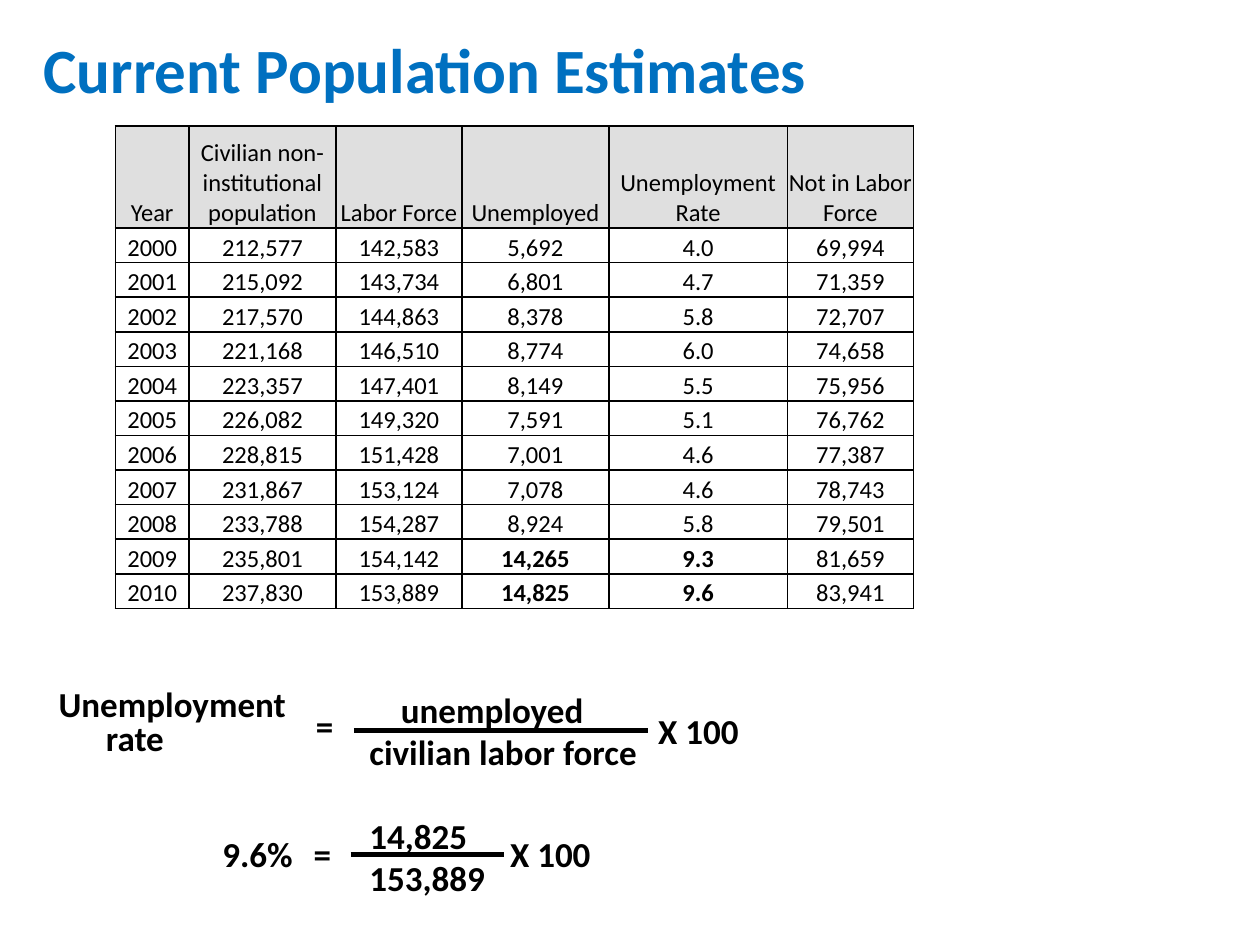
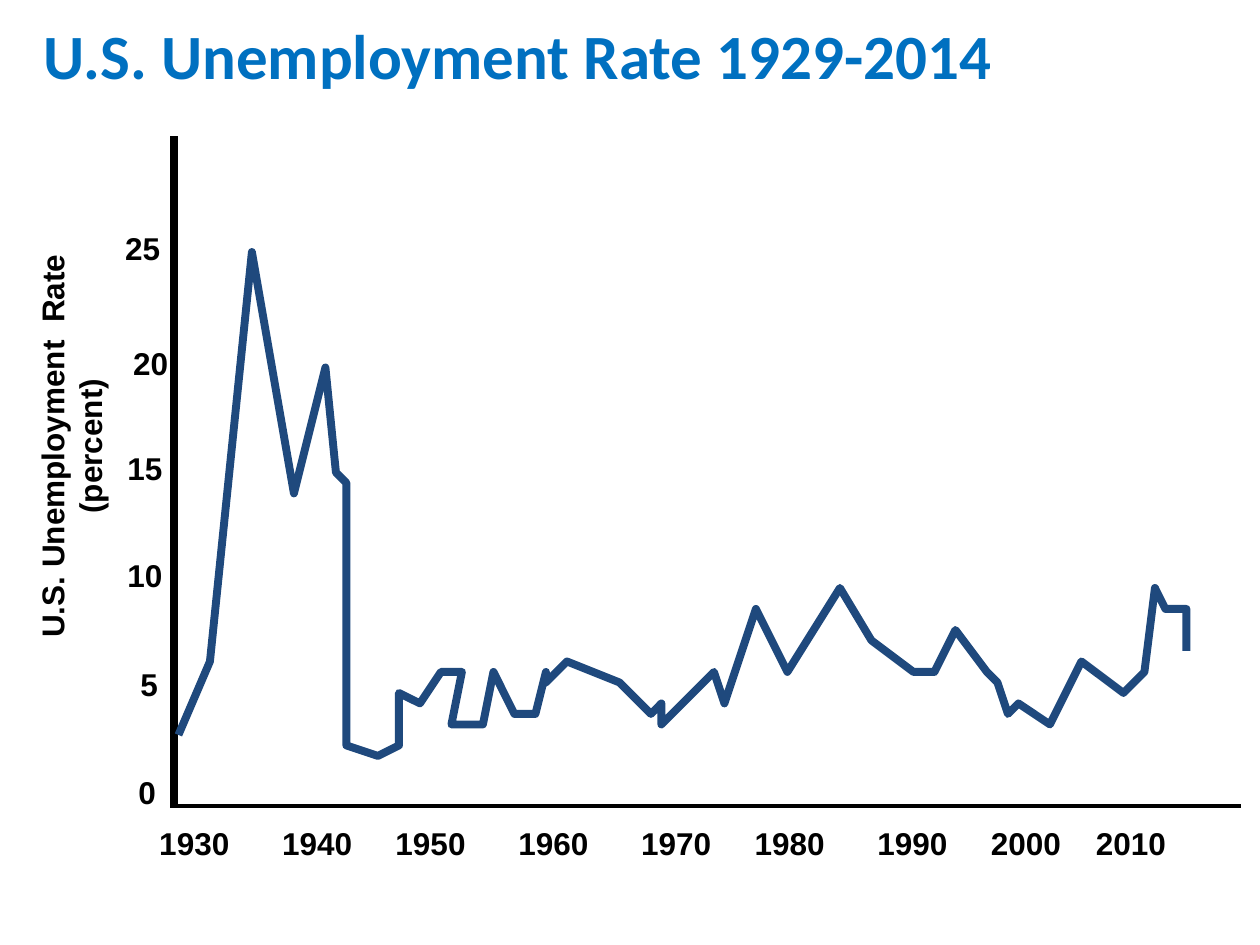
from lxml.etree import SubElement
from pptx import Presentation
from pptx.dml.color import RGBColor
from pptx.enum.shapes import MSO_CONNECTOR
from pptx.enum.text import MSO_ANCHOR, PP_ALIGN
from pptx.oxml.ns import qn
from pptx.util import Inches, Pt

STEP = Inches(1) // 12
COLUMNS, ROWS = 120, 90
BLACK, WHITE, TITLE_BLUE = "000000", "FFFFFF", "0070C0"
RATE_BLUE, HEADER_GREY = "1F497D", "808080"


def color(hex_code):
    return RGBColor.from_string(hex_code)


def write(target, text, at=None, size=20, font="Calibri", ink=BLACK, bold=True,
          align=PP_ALIGN.LEFT, anchor=MSO_ANCHOR.TOP, spacing=None,
          first_indent=None, rotation=0):
    if at:
        box = target.shapes.add_textbox(*[round(v * STEP) for v in at])
        box.rotation = rotation
        target = box.text_frame
    target.word_wrap = True
    target.vertical_anchor = anchor
    target.text = text
    for paragraph in target.paragraphs:
        paragraph.alignment = align
        paragraph.line_spacing = spacing
        paragraph.font.size = Pt(size)
        paragraph.font.name = font
        paragraph.font.bold = bold
        paragraph.font.color.rgb = color(ink)
    if first_indent:
        properties = target.paragraphs[0]._p.get_or_add_pPr()
        for name, columns in zip(("marL", "indent"), first_indent):
            properties.set(name, str(round(columns * STEP)))


deck = Presentation()
deck.slide_width, deck.slide_height = COLUMNS * STEP, ROWS * STEP

slides = []
for heading, top, width, height in [
    ("Current Population Estimates", 2.6, 99, 7.8),
    ("U.S. Unemployment Rate 1929-2014", 0.9, 110, 8.5),
]:
    slide = deck.slides.add_slide(deck.slide_layouts[5])
    title = slide.shapes.title
    title.left, title.top = round(2.95 * STEP), round(top * STEP)
    title.width, title.height = width * STEP, round(height * STEP)
    write(title.text_frame, heading, size=36, ink=TITLE_BLUE, anchor=MSO_ANCHOR.MIDDLE)
    slides.append(slide)
estimates_slide, history_slide = slides
history_slide.shapes.title.fill.solid()
history_slide.shapes.title.fill.fore_color.rgb = color(WHITE)

estimates = [
    ("Year", "Civilian non-institutional population", "Labor Force", "Unemployed",
     "Unemployment Rate", "Not in Labor Force"),
    ("2000", "212,577", "142,583", "5,692", "4.0", "69,994"),
    ("2001", "215,092", "143,734", "6,801", "4.7", "71,359"),
    ("2002", "217,570", "144,863", "8,378", "5.8", "72,707"),
    ("2003", "221,168", "146,510", "8,774", "6.0", "74,658"),
    ("2004", "223,357", "147,401", "8,149", "5.5", "75,956"),
    ("2005", "226,082", "149,320", "7,591", "5.1", "76,762"),
    ("2006", "228,815", "151,428", "7,001", "4.6", "77,387"),
    ("2007", "231,867", "153,124", "7,078", "4.6", "78,743"),
    ("2008", "233,788", "154,287", "8,924", "5.8", "79,501"),
    ("2009", "235,801", "154,142", "14,265", "9.3", "81,659"),
    ("2010", "237,830", "153,889", "14,825", "9.6", "83,941"),
]
column_widths = [7, 14, 12, 14, 17, 12]
table_height, header_height = Inches(3.83), Inches(0.81)
year_height = (table_height - header_height) // (len(estimates) - 1)
table = estimates_slide.shapes.add_table(
    len(estimates), len(column_widths), 11 * STEP, 12 * STEP,
    sum(column_widths) * STEP, table_height).table
table.first_row = table.horz_banding = False
for column, width in zip(table.columns, column_widths):
    column.width = width * STEP
for r, record in enumerate(estimates):
    table.rows[r].height = year_height if r else header_height
    for c, value in enumerate(record):
        cell = table.cell(r, c)
        cell.margin_left = cell.margin_right = cell.margin_top = Inches(0.01)
        cell.margin_bottom = 0
        write(cell.text_frame, value, size=14, bold=r > 9 and c in (3, 4),
              align=PP_ALIGN.CENTER)
        cell.vertical_anchor = MSO_ANCHOR.BOTTOM
        cell_properties = cell._tc.get_or_add_tcPr()
        for side in ("a:lnL", "a:lnR", "a:lnT", "a:lnB"):
            border = SubElement(cell_properties, qn(side), w=str(Pt(1)))
            border_fill = SubElement(border, qn("a:solidFill"))
            SubElement(border_fill, qn("a:srgbClr"), val=BLACK)
        if r:
            cell.fill.background()
        else:
            cell.fill.solid()
            cell.fill.fore_color.rgb = color(HEADER_GREY)
            shade = cell_properties.find(qn("a:solidFill")).find(qn("a:srgbClr"))
            SubElement(shade, qn("a:alpha"), val="25000")

for term, at, spacing, first_indent in [
    ("Unemployment rate", (4.4, 65.2, 27, 7.7), 0.8, (4.5, -4.5)),
    ("=", (28.9, 67.3, 5, 4.6), 0.8, None),
    ("unemployed\ncivilian labor force", (34, 65, 33, 9.2), None, (3, 0)),
    ("X 100", (61.5, 67.8, 16.5, 4.6), 0.8, None),
    ("9.6%", (20, 79.5, 11.4, 4.6), 0.8, None),
    ("=", (28.7, 79.5, 5, 4.6), 0.8, None),
    ("14,825\n153,889", (34, 77, 33, 9.2), None, None),
    ("X 100", (47.4, 79.5, 16.5, 4.6), 0.8, None),
]:
    write(estimates_slide, term, at, spacing=spacing, first_indent=first_indent)

rate_points = [
    (17, 70), (20, 63), (24, 24), (28, 47), (31, 35), (32, 45), (33, 46), (33, 71),
    (36, 72), (38, 71), (38, 66), (40, 67), (42, 64), (44, 64), (43, 69), (46, 69),
    (47, 64), (49, 68), (51, 68), (52, 64), (52, 65), (54, 63), (59, 65), (62, 68),
    (63, 67), (63, 69), (68, 64), (69, 67), (72, 58), (75, 64), (80, 56), (83, 61),
    (87, 64), (89, 64), (91, 60), (94, 64), (95, 65), (96, 68), (97, 67), (100, 69),
    (103, 63), (107, 66), (109, 64), (110, 56), (111, 58), (113, 58), (113, 62),
]

for slide, start_x, start_y, end_x, end_y, weight in [
    (estimates_slide, 33.7, 69.6, 61.7, 69.6, 3),
    (estimates_slide, 33.4, 81.4, 48, 81.4, 3),
    (history_slide, 16.6, 13, 16.6, 77, 4.5),
    (history_slide, 16.4, 76.8, 118.2, 76.8, 2.25),
]:
    rule = slide.shapes.add_connector(
        MSO_CONNECTOR.STRAIGHT,
        *[round(v * STEP) for v in (start_x, start_y, end_x, end_y)])
    rule.line.color.rgb = color(BLACK)
    rule.line.width = Pt(weight)
    SubElement(rule._element.spPr, qn("a:effectLst"))

builder = history_slide.shapes.build_freeform(*rate_points[0], scale=STEP)
builder.add_line_segments(rate_points[1:], close=False)
rate_line = builder.convert_to_shape()
rate_line.shadow.inherit = False
rate_line.fill.background()
rate_line.line.color.rgb = color(RATE_BLUE)
rate_line.line.width = Pt(4.5)

for percent, left, top in [
    ("25", 10.75, 21.2), ("20", 11.5, 32.2), ("15", 10.95, 42.15),
    ("10", 10.95, 52.35), ("5", 12.2, 62.75), ("0", 12, 73),
]:
    write(history_slide, percent, (left, top, 7, 4.8), size=18, font="Arial")

decade_centers = [18.5, 30.2, 41, 52.7, 64.4, 75.2, 86.9, 97.7, 107.7]
for decade, center in enumerate(decade_centers):
    write(history_slide, str(1930 + 10 * decade), (center - 5, 77.9, 10, 4.8),
          size=18, font="Arial", align=PP_ALIGN.CENTER)

write(history_slide, "U.S. Unemployment  Rate (percent)", (-15.7, 38.3, 44.9, 8.4),
      size=18, font="Arial", align=PP_ALIGN.CENTER, rotation=270)

deck.save("out.pptx")
